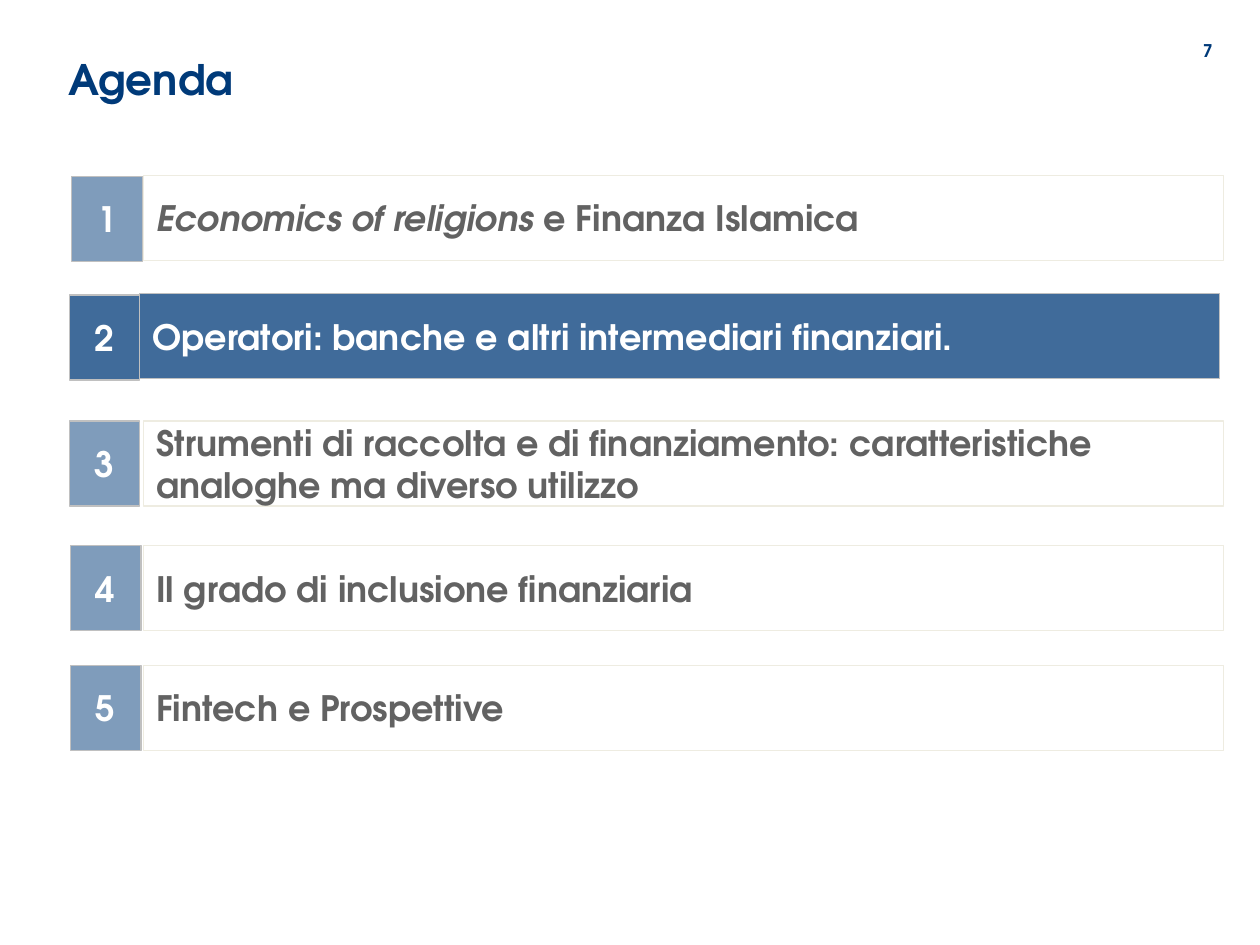
from dataclasses import dataclass

from lxml import etree
from pptx import Presentation
from pptx.dml import color
from pptx.enum import shapes, text
from pptx.oxml import ns
from pptx.util import Pt

FONT = "TeX Gyre Adventor"
NAVY, WHITE, GREY = "003A79", "FFFFFF", "626262"
SILVER, CREAM = "C0C0C0", "EEECE1"
NUM_W, LABEL_W, ROW_H = 40.32, 617.04, 48.6


@dataclass
class Run:
    text: str
    italic: bool = False


@dataclass
class Row:
    num_left: float
    num_top: float
    label_left: float
    label_top: float
    runs: list[Run]
    active: bool = False


ROWS = [
    Row(41.04, 100.8, 82.08, 100.08,
        [Run("Economics of religions ", True), Run("e Finanza Islamica")]),
    Row(39.6, 168.48, 79.92, 167.76,
        [Run("Operatori: banche e altri intermediari finanziari.")], True),
    Row(39.6, 240.48, 82.08, 240.48,
        [Run("Strumenti di raccolta e di finanziamento: caratteristiche "
             "analoghe ma diverso utilizzo")]),
    Row(40.32, 311.76, 82.08, 311.76, [Run("Il grado di inclusione finanziaria")]),
    Row(40.32, 380.16, 82.08, 380.16, [Run("Fintech e Prospettive")]),
]


def rgb(value: str) -> color.RGBColor:
    return color.RGBColor.from_string(value)


def write(sp, runs: list[Run], size: float, ink: str, align) -> None:
    tf = sp.text_frame
    tf.word_wrap = True
    tf.vertical_anchor = text.MSO_ANCHOR.MIDDLE
    p = tf.paragraphs[0]
    p.alignment = align
    for item in runs:
        r = p.add_run()
        r.text = item.text
        r.font.name = FONT
        r.font.size = Pt(size)
        r.font.bold = True
        r.font.italic = item.italic
        r.font.color.rgb = rgb(ink)


def add_box(s, left: float, top: float, width: float, fill: str, alpha: int,
            line: str, runs: list[Run], ink: str, align) -> None:
    sp = s.shapes.add_shape(shapes.MSO_SHAPE.RECTANGLE,
                            Pt(left), Pt(top), Pt(width), Pt(ROW_H))
    sp.shadow.inherit = False
    sp.fill.solid()
    sp.fill.fore_color.rgb = rgb(fill)
    if alpha < 100:
        clr = sp._element.spPr.find(ns.qn("a:solidFill"))[0]
        etree.SubElement(clr, ns.qn("a:alpha"), val=str(alpha * 1000))
    sp.line.color.rgb = rgb(line)
    sp.line.width = Pt(0.75)
    write(sp, runs, 20, ink, align)


def add_row(s, number: int, row: Row) -> None:
    add_box(s, row.num_left, row.num_top, NUM_W, NAVY, 75 if row.active else 50,
            SILVER, [Run(str(number))], WHITE, text.PP_ALIGN.CENTER)
    fill, alpha, line, ink = ((NAVY, 75, SILVER, WHITE) if row.active
                              else (WHITE, 100, CREAM, GREY))
    add_box(s, row.label_left, row.label_top, LABEL_W, fill, alpha, line,
            row.runs, ink, text.PP_ALIGN.LEFT)


def main() -> None:
    prs = Presentation()
    prs.slide_width, prs.slide_height = Pt(720), Pt(540)
    s = prs.slides.add_slide(prs.slide_layouts[5])

    title = s.shapes.title
    title.left, title.top, title.width, title.height = (
        Pt(31.68), Pt(28.8), Pt(617.04), Pt(36))
    write(title, [Run("Agenda")], 24, NAVY, text.PP_ALIGN.LEFT)
    title.text_frame.paragraphs[0].line_spacing = 0.9

    for number, row in enumerate(ROWS, 1):
        add_row(s, number, row)

    page = s.shapes.add_textbox(Pt(673.92), Pt(14.4), Pt(32.4), Pt(28.8))
    write(page, [Run("7")], 10, NAVY, text.PP_ALIGN.CENTER)

    prs.save("out.pptx")


if __name__ == "__main__":
    main()
